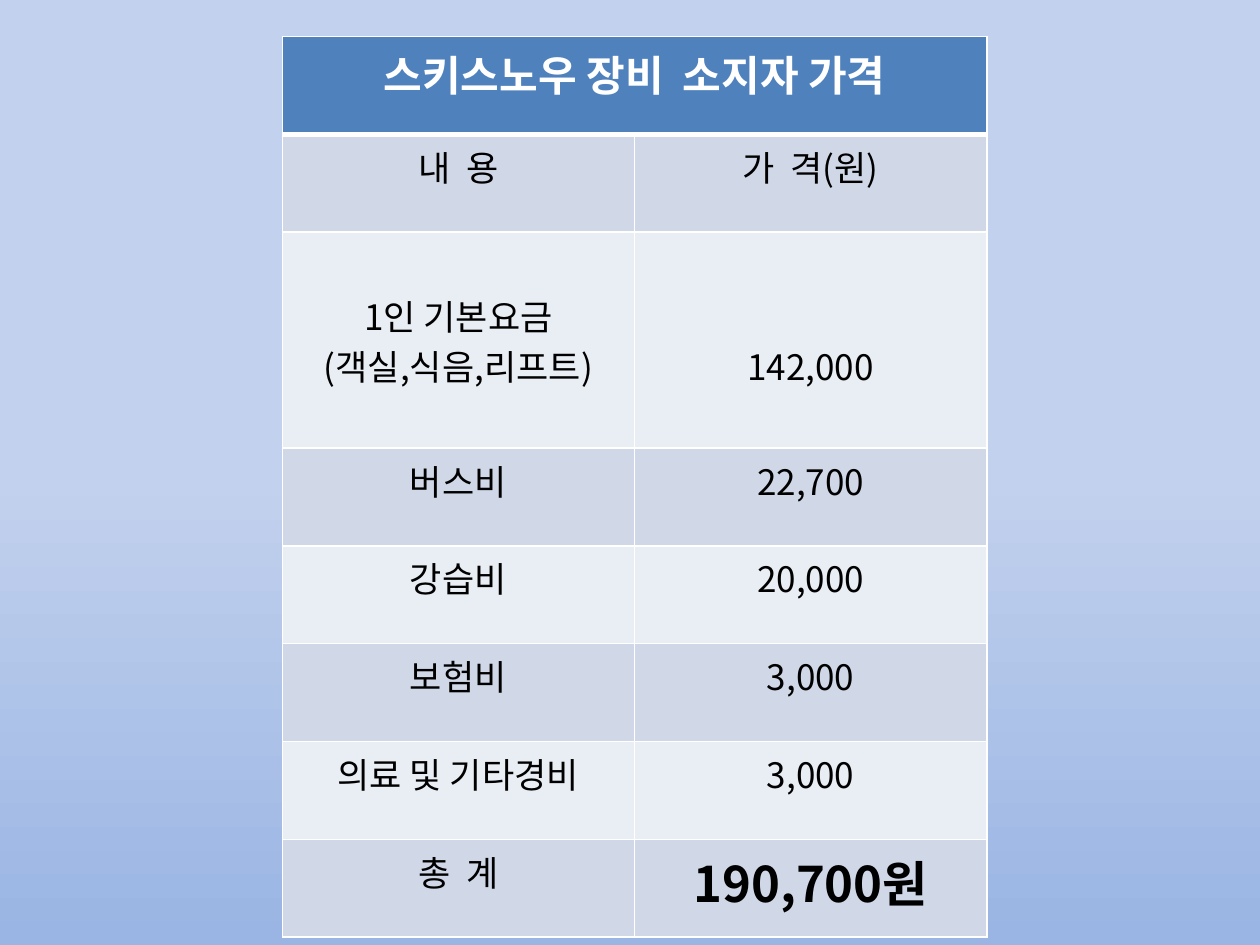
from lxml import etree
from pptx import Presentation
from pptx.dml.color import RGBColor
from pptx.enum import text
from pptx.oxml import ns
from pptx.util import Pt

# Content: heading, then (item, price) rows; each line is (words, line spacing)
HEADING = "스키스노우 장비  소지자 가격"
PRICES = [
    ([("내  용", 1)], [("가  격(원)", 1)]),
    ([("1인 기본요금", 2), ("(객실,식음,리프트)", 1)], [("142,000", 3)]),
    ([("버스비", 1)], [("22,700", 1)]),
    ([("강습비", 1)], [("20,000", 1)]),
    ([("보험비", 1)], [("3,000", 1)]),
    ([("의료 및 기타경비", 1)], [("3,000", 1)]),
    ([("총  계", 1)], [("190,700원", 1)]),
]

THEME = {
    "font": "Noto Sans CJK KR",
    "heading_size": 24, "body_size": 20, "total_size": 28,
    "heading_fill": "4F81BD", "bands": ("D0D8E8", "E9EDF4"),
    "white": "FFFFFF", "black": "000000",
    "sky": ("C2D1ED", "9AB5E4"),
}
LEFT, TOP, COLUMN = 161.3, 20.9, 201.3
ROW, BASIC_FEE_ROW = 55.9, 96.5
BASIC_FEE = 2


def border(cell, side, width):
    line = etree.SubElement(cell._tc.get_or_add_tcPr(), ns.qn(f"a:ln{side}"), w=str(Pt(width)))
    paint = etree.SubElement(line, ns.qn("a:solidFill"))
    etree.SubElement(paint, ns.qn("a:srgbClr"), val=THEME["white"])


def fill_cell(cell, lines, fill, size, color, bold=False, bottom=1):
    # Borders go before the fill in the cell properties
    for side, width in (("L", 1), ("R", 1), ("T", 1), ("B", bottom)):
        border(cell, side, width)
    cell.fill.solid()
    cell.fill.fore_color.rgb = RGBColor.from_string(fill)
    frame = cell.text_frame
    frame.text = "\n".join(words for words, _ in lines)
    for paragraph, (_, spacing) in zip(frame.paragraphs, lines):
        paragraph.alignment = text.PP_ALIGN.CENTER
        paragraph.line_spacing = float(spacing)
        font = paragraph.runs[0].font
        font.size, font.bold, font.name = Pt(size), bold, THEME["font"]
        font.color.rgb = RGBColor.from_string(color)
        etree.SubElement(font._element, ns.qn("a:ea"), typeface=THEME["font"])


def main():
    deck = Presentation()
    deck.slide_width, deck.slide_height = Pt(720), Pt(540)
    slide = deck.slides.add_slide(deck.slide_layouts[6])

    # Background: flat to the middle, then darker downwards
    sky = slide.background.fill
    sky.gradient()
    sky.gradient_angle = 270
    for stop, color, position in zip(sky.gradient_stops, THEME["sky"], (0.5, 1)):
        stop.color.rgb = RGBColor.from_string(color)
        stop.position = position

    # Table grid
    heights = [ROW] * (len(PRICES) + 1)
    heights[BASIC_FEE] = BASIC_FEE_ROW
    table = slide.shapes.add_table(len(heights), 2, Pt(LEFT), Pt(TOP),
                                   Pt(2 * COLUMN), Pt(sum(heights))).table
    for column in table.columns:
        column.width = Pt(COLUMN)
    for row, height in zip(table.rows, heights):
        row.height = Pt(height)

    # Heading across both columns
    table.cell(0, 0).merge(table.cell(0, 1))
    fill_cell(table.cell(0, 0), [(HEADING, 1)], THEME["heading_fill"],
              THEME["heading_size"], THEME["white"], bold=True, bottom=3)

    # Banded price rows, with the total set larger
    for r, prices in enumerate(PRICES, 1):
        for c, lines in enumerate(prices):
            total = r == len(PRICES) and c == 1
            size = THEME["total_size" if total else "body_size"]
            fill_cell(table.cell(r, c), lines, THEME["bands"][(r - 1) % 2],
                      size, THEME["black"], bold=total)

    deck.save("out.pptx")


if __name__ == "__main__":
    main()
